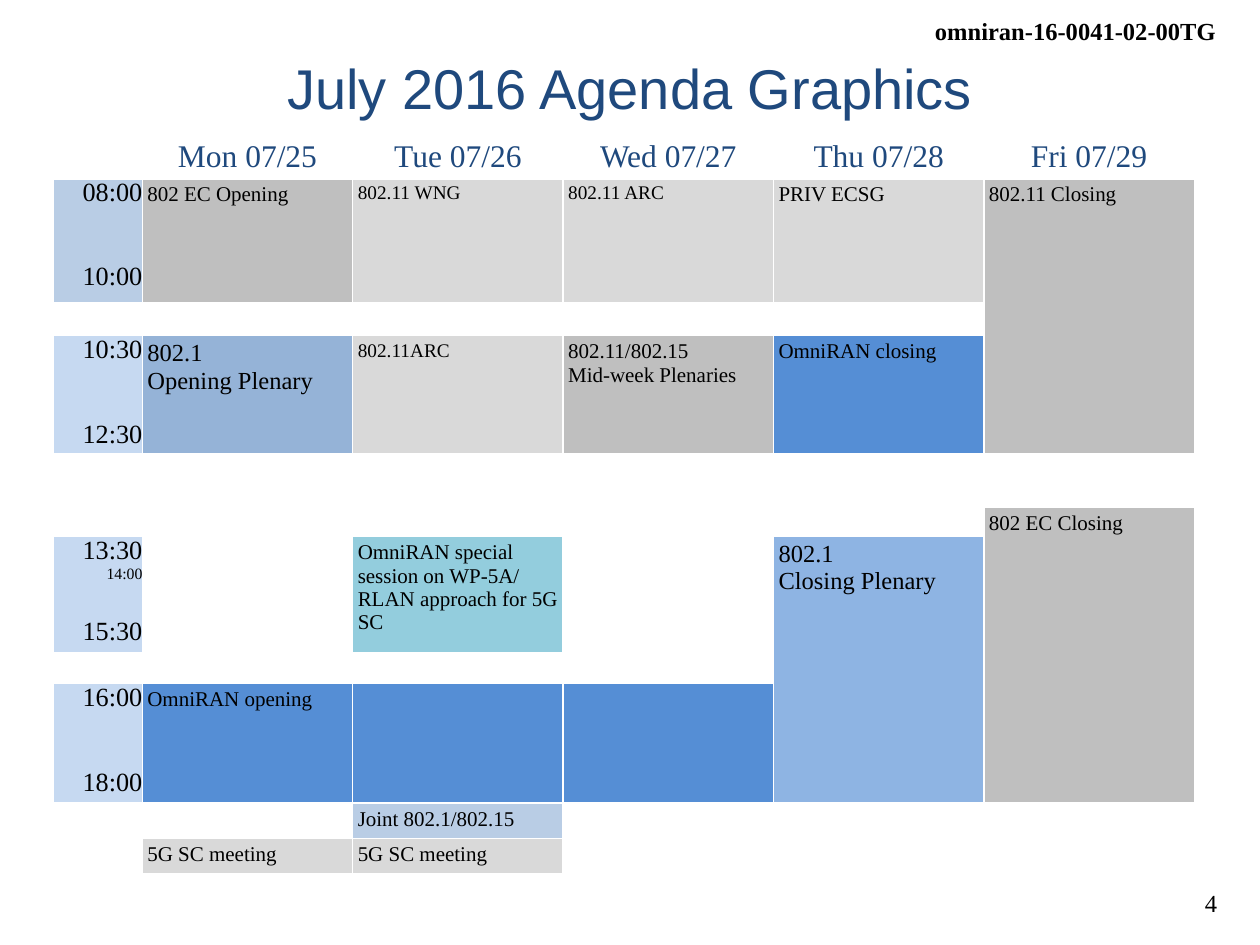
from lxml import etree
from pptx import Presentation
from pptx.dml.color import RGBColor
from pptx.enum.text import MSO_ANCHOR, PP_ALIGN
from pptx.oxml.ns import qn
from pptx.util import Inches, Pt

LEFT, CENTER, RIGHT = PP_ALIGN.LEFT, PP_ALIGN.CENTER, PP_ALIGN.RIGHT
TOP, MIDDLE = MSO_ANCHOR.TOP, MSO_ANCHOR.MIDDLE
SERIF, SANS = "Times New Roman", "Arial"

COLORS = {
    "white": "FFFFFF", "black": "000000", "navy": "1F497D",
    "plenary": "BFBFBF", "other": "D9D9D9",
    "early": "B9CDE5", "time": "C6D9F1", "joint": "B9CDE5",
    "opening": "95B3D7", "closing": "8EB4E3",
    "omniran": "558ED5", "special": "93CDDD",
}

COL_WIDTHS = [0.71] + [1.67] * 5
ROW_HEIGHTS = [0.29, 0.99, 0.26, 0.91, 0.42, 0.23, 0.5, 0.39, 0.24, 0.95, 0.27, 0.26]
DAYS = ["Mon 07/25", "Tue 07/26", "Wed 07/27", "Thu 07/28", "Fri 07/29"]

# row, rows spanned, fill, lines as (text, size, space before)
TIMES = [
    (1, 1, "early", [("08:00", 15, 0), ("10:00", 15, 32)]),
    (3, 1, "time", [("10:30", 15, 0), ("12:30", 15, 32)]),
    (6, 2, "time", [("13:30", 15, 0), ("14:00", 9, 0), ("15:30", 15, 20)]),
    (9, 1, "time", [("16:00", 15, 0), ("18:00", 15, 32)]),
]

# row, column, rows spanned, fill, text, size
SESSIONS = [
    (1, 1, 1, "plenary", "802 EC Opening", 12),
    (1, 2, 1, "other", "802.11 WNG", 11),
    (1, 3, 1, "other", "802.11 ARC", 11),
    (1, 4, 1, "other", "PRIV ECSG", 12),
    (1, 5, 3, "plenary", "802.11 Closing", 12),
    (3, 1, 1, "opening", "802.1\nOpening Plenary", 14),
    (3, 2, 1, "other", "802.11ARC", 11),
    (3, 3, 1, "plenary", "802.11/802.15\nMid-week Plenaries", 12),
    (3, 4, 1, "omniran", "OmniRAN closing", 12),
    (5, 5, 5, "plenary", "802 EC Closing", 12),
    (6, 2, 2, "special", "OmniRAN special session on WP-5A/ RLAN approach for 5G SC", 12),
    (6, 4, 4, "closing", "802.1\nClosing Plenary", 14),
    (9, 1, 1, "omniran", "OmniRAN opening", 12),
    (9, 2, 1, "omniran", "", 12),
    (9, 3, 1, "omniran", "", 12),
    (10, 2, 1, "joint", "Joint 802.1/802.15", 12),
    (11, 1, 1, "other", "5G SC meeting", 12),
    (11, 2, 1, "other", "5G SC meeting", 12),
]

# row, column, rows spanned
FREE_SPANS = [(4, 0, 2), (4, 1, 3), (4, 2, 2), (4, 3, 2), (4, 4, 2),
              (6, 3, 2), (10, 0, 2), (10, 3, 2), (10, 4, 2)]


def rgb(name):
    return RGBColor.from_string(COLORS[name])


def write(p, text, size, align=LEFT, color="black", font=SERIF, bold=False, before=0):
    p.text = text
    p.alignment = align
    p.space_before = Pt(before)
    for r in p.runs:
        for key, value in {"size": Pt(size), "name": font, "bold": bold}.items():
            setattr(r.font, key, value)
        r.font.color.rgb = rgb(color)


def add_label(s, left, top, width, height, text, bold=False):
    tf = s.shapes.add_textbox(*map(Inches, (left, top, width, height))).text_frame
    tf.word_wrap = False
    write(tf.paragraphs[0], text, 14, RIGHT, bold=bold)


def add_title(s, text):
    sp = s.shapes.title
    box = {"left": 0.5, "top": 0.3, "width": 9, "height": 0.78}
    for key, value in box.items():
        setattr(sp, key, Inches(value))
    sp.text_frame.vertical_anchor = MIDDLE
    write(sp.text_frame.paragraphs[0], text, 32, CENTER, "navy", SANS)


def set_borders(cell, bottom):
    tcPr = cell._tc.get_or_add_tcPr()
    widths = {"a:lnL": 1, "a:lnR": 1, "a:lnT": 1, "a:lnB": bottom}
    for i, (tag, width) in enumerate(widths.items()):
        ln = etree.Element(qn(tag), w=str(Pt(width)))
        fill = etree.SubElement(ln, qn("a:solidFill"))
        etree.SubElement(fill, qn("a:srgbClr"), val=COLORS["white"])
        tcPr.insert(i, ln)


def set_cell(cell, fill, lines=(), margin=0.0, align=LEFT, color="black"):
    cell.fill.solid()
    cell.fill.fore_color.rgb = rgb(fill)
    cell.vertical_anchor = TOP
    for side in ("left", "right", "top", "bottom"):
        setattr(cell, f"margin_{side}", Inches(margin))
    tf = cell.text_frame
    for i, (text, size, before) in enumerate(lines):
        p = tf.add_paragraph() if i else tf.paragraphs[0]
        write(p, text, size, align, color, before=before)


def add_agenda(s):
    table = s.shapes.add_table(len(ROW_HEIGHTS), len(COL_WIDTHS), Inches(0.42), Inches(1.11),
                               Inches(sum(COL_WIDTHS)), Inches(sum(ROW_HEIGHTS))).table
    table.first_row = table.horz_banding = False
    for column, width in zip(table.columns, COL_WIDTHS):
        column.width = Inches(width)
    for i, (row, height) in enumerate(zip(table.rows, ROW_HEIGHTS)):
        row.height = Inches(height)
        for cell in row.cells:
            set_cell(cell, "white")
            set_borders(cell, 1 if i else 3)
            # a small size keeps empty cells from stretching the short rows
            end = etree.SubElement(cell.text_frame.paragraphs[0]._p, qn("a:endParaRPr"))
            end.set("sz", "800")

    def span(row, col, rows):
        cell = table.cell(row, col)
        if rows > 1:
            cell.merge(table.cell(row + rows - 1, col))
        return cell

    for row, col, rows in FREE_SPANS:
        span(row, col, rows)
    for col, day in enumerate(DAYS, 1):
        set_cell(table.cell(0, col), "white", [(day, 18, 0)], align=CENTER, color="navy")
    for row, rows, fill, lines in TIMES:
        set_cell(span(row, 0, rows), fill, lines, align=RIGHT)
    for row, col, rows, fill, text, size in SESSIONS:
        set_cell(span(row, col, rows), fill, [(text, size, 0)], margin=0.04)


def main():
    prs = Presentation()
    prs.slide_width, prs.slide_height = Inches(10), Inches(7.5)
    s = prs.slides.add_slide(prs.slide_layouts[5])
    add_label(s, 7.3, 0.08, 2.45, 0.34, "omniran-16-0041-02-00TG", bold=True)
    add_label(s, 9.33, 7, 0.43, 0.34, "4")
    add_title(s, "July 2016 Agenda Graphics")
    add_agenda(s)
    prs.save("out.pptx")


if __name__ == "__main__":
    main()
